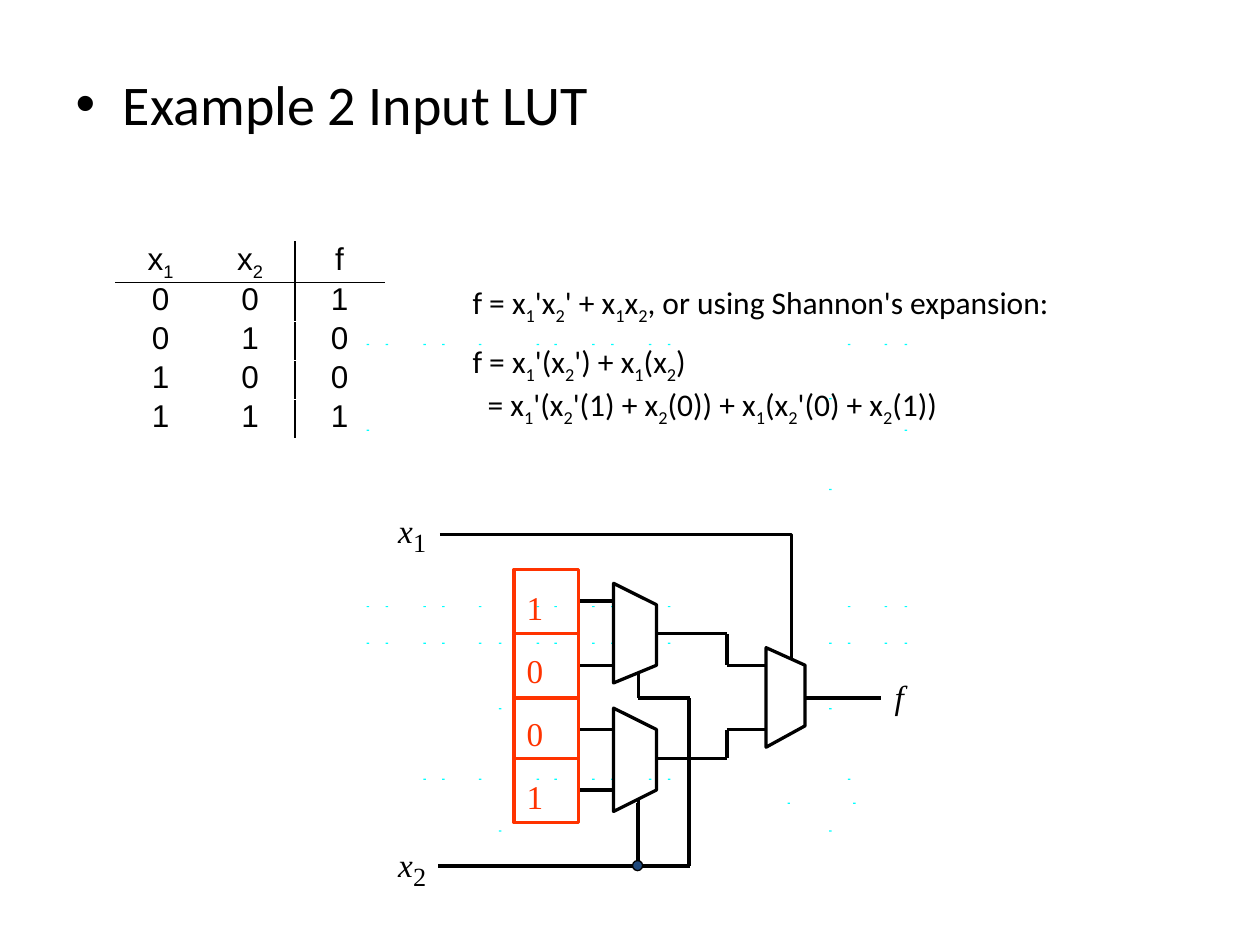
"""Build a slide that explains a two-input lookup table."""
from dataclasses import dataclass

from lxml import etree
from pptx import Presentation
from pptx.dml.color import RGBColor
from pptx.enum.shapes import MSO_CONNECTOR, MSO_SHAPE
from pptx.enum.text import PP_ALIGN
from pptx.oxml.ns import qn
from pptx.util import Inches, Pt

RECT, OVAL, STRAIGHT = MSO_SHAPE.RECTANGLE, MSO_SHAPE.OVAL, MSO_CONNECTOR.STRAIGHT
CENTER = PP_ALIGN.CENTER
COLORS = {"ink": "000000", "cell": "FF3300", "speck": "00FFFF", "node": "1F497D", "paper": "FFFFFF"}
SERIF = "Times New Roman"
THIN, THICK = 1.88, 2.25

COLUMNS = [2.91, 3.06, 3.36, 3.51, 3.8, 4.26, 4.4, 4.7, 4.85, 5.15, 5.3, 6.73, 7.02, 7.18]
SPECKS = {
    2.73: COLUMNS,
    3.16: [6.58],
    3.41: [2.91, 7.18],
    3.88: [6.58],
    4.81: COLUMNS,
    5.1: COLUMNS + [3.96, 6.58],
    5.62: [3.96, 6.58],
    6.18: COLUMNS[2:12],
    6.37: [6.25, 6.77],
    6.59: [3.96, 6.58],
}
TRUTH = [["x_1", "x_2", "f"], "001", "010", "100", "111"]


@dataclass
class Equation:
    text: str
    before: float = 9
    indent: float = 0


@dataclass
class Wire:
    x1: float
    y1: float
    x2: float
    y2: float
    width: float = THIN


@dataclass
class Mux:
    left: float
    right: float
    ys: tuple
    fill: str = ""


@dataclass
class Label:
    text: str
    x: float
    y: float
    w: float
    h: float = 0.32
    size: float = 19
    color: str = "ink"
    italic: bool = False


@dataclass
class Memory:
    bit: str
    y: float
    h: float
    text_y: float


EQUATIONS = [
    Equation("f = x_1'x_2' + x_1x_2, or using Shannon's expansion:"),
    Equation("f = x_1'(x_2') + x_1(x_2)"),
    Equation("= x_1'(x_2'(1) + x_2(0)) + x_1(x_2'(0) + x_2(1))", 0, 0.12),
]
MEMORY = [
    Memory("1", 4.52, 0.51, 4.66),
    Memory("0", 5.03, 0.51, 5.16),
    Memory("0", 5.54, 0.48, 5.66),
    Memory("1", 6.02, 0.51, 6.16),
]
MUXES = [
    Mux(4.87, 5.21, (4.63, 4.8, 5.28, 5.42), "paper"),
    Mux(4.87, 5.21, (5.62, 5.79, 6.27, 6.44)),
    Mux(6.08, 6.39, (5.14, 5.28, 5.76, 5.93)),
]
WIRES = [Wire(4.59, y, 4.87, y) for y in (4.77, 5.28, 5.79, 6.27)] + [
    Wire(5.21, 5.03, 5.77, 5.03),
    Wire(5.77, 5.03, 5.77, 5.28),
    Wire(5.77, 5.28, 6.08, 5.28),
    Wire(5.21, 6.02, 5.77, 6.02),
    Wire(5.77, 6.02, 5.77, 5.79),
    Wire(5.77, 5.79, 6.08, 5.79),
    Wire(6.39, 5.54, 6.99, 5.54),
    Wire(5.07, 5.34, 5.07, 5.54),
    Wire(5.07, 6.33, 5.07, 6.52),
    Wire(3.48, 6.87, 5.48, 6.87, THICK),
    Wire(5.06, 6.37, 5.06, 6.87, THICK),
    Wire(5.47, 6.87, 5.47, 5.54, THICK),
    Wire(5.48, 5.54, 5.06, 5.54, THICK),
]
LABELS = [Label("f", 7.1, 5.37, 0.15, italic=True)]
for digit, top in (("1", 4.05), ("2", 6.7)):
    LABELS += [
        Label("x", 3.16, top, 0.2, italic=True),
        Label(digit, 3.28, top + 0.13, 0.17, 0.25, 15),
    ]


def rgb(name: str) -> RGBColor:
    return RGBColor.from_string(COLORS[name])


def style_font(font, name: str, size: float, color: str = "ink") -> None:
    font.name, font.size = name, Pt(size)
    font.color.rgb = rgb(color)


def style_shape(sp, fill: str = "", line: str = "", width: float = THIN) -> None:
    sp.shadow.inherit = False
    if fill:
        sp.fill.solid()
        sp.fill.fore_color.rgb = rgb(fill)
    else:
        sp.fill.background()
    if line:
        sp.line.color.rgb = rgb(line)
        sp.line.width = Pt(width)
    else:
        sp.line.fill.background()


def add_box(shapes, kind, x: float, y: float, w: float, h: float, **style) -> None:
    sp = shapes.add_shape(kind, Inches(x), Inches(y), Inches(w), Inches(h))
    style_shape(sp, **style)


def add_outline(shapes, points: list, close: bool, fill: str = "") -> None:
    pts = [(Inches(x), Inches(y)) for x, y in points]
    builder = shapes.build_freeform(*pts[0])
    builder.add_line_segments(pts[1:], close=close)
    style_shape(builder.convert_to_shape(), fill, "ink")


def add_wire(shapes, wire: Wire) -> None:
    ends = (Inches(v) for v in (wire.x1, wire.y1, wire.x2, wire.y2))
    c = shapes.add_connector(STRAIGHT, *ends)
    c.line.color.rgb = rgb("ink")
    c.line.width = Pt(wire.width)
    etree.SubElement(c._element.spPr, qn("a:effectLst"))


def add_text_frame(shapes, x: float, y: float, w: float, h: float, wrap: bool):
    tf = shapes.add_textbox(Inches(x), Inches(y), Inches(w), Inches(h)).text_frame
    tf.margin_left = tf.margin_right = tf.margin_top = tf.margin_bottom = 0
    tf.word_wrap = wrap
    return tf


def add_label(shapes, label: Label) -> None:
    tf = add_text_frame(shapes, label.x, label.y, label.w, label.h, False)
    tf.text = label.text
    font = tf.paragraphs[0].runs[0].font
    style_font(font, SERIF, label.size, label.color)
    font.italic = label.italic


def add_formula(p, text: str, font_name: str) -> None:
    """Write text in which an underscore lowers the next character."""
    first, *rest = text.split("_")
    pieces = [(first, False)]
    for part in rest:
        pieces += [(part[0], True), (part[1:], False)]
    for piece, lowered in pieces:
        if piece:
            r = p.add_run()
            r.text = piece
            style_font(r.font, font_name, 18)
            if lowered:
                r._r.get_or_add_rPr().set("baseline", "-25000")


def add_borders(cell, sides: list) -> None:
    tc_pr = cell._tc.get_or_add_tcPr()
    for i, side in enumerate(sides):
        ln = etree.Element(qn(f"a:ln{side}"), w=str(Pt(1)))
        fill = etree.SubElement(ln, qn("a:solidFill"))
        etree.SubElement(fill, qn("a:srgbClr"), val=COLORS["ink"])
        tc_pr.insert(i, ln)


def add_truth_table(shapes) -> None:
    frame = shapes.add_table(5, 3, Inches(0.92), Inches(1.92), Inches(2.13), Inches(1.55))
    table = frame.table
    table.first_row = table.horz_banding = False
    for i, row in enumerate(TRUTH):
        for j, text in enumerate(row):
            cell = table.cell(i, j)
            cell.margin_left = cell.margin_right = cell.margin_top = cell.margin_bottom = 0
            cell.fill.background()
            p = cell.text_frame.paragraphs[0]
            p.alignment = CENTER
            add_formula(p, text, "Arial")
            edges = {"L": j == 2, "R": j == 1, "T": i == 1, "B": i == 0}
            add_borders(cell, [side for side, shown in edges.items() if shown])


def add_equations(shapes) -> None:
    tf = add_text_frame(shapes, 3.75, 2.25, 5.92, 1.17, True)
    for i, equation in enumerate(EQUATIONS):
        p = tf.add_paragraph() if i else tf.paragraphs[0]
        p.space_before = Pt(equation.before)
        p._p.get_or_add_pPr().set("marL", str(Inches(equation.indent)))
        add_formula(p, equation.text, "Calibri")


def add_circuit(shapes) -> None:
    for wire in WIRES:
        add_wire(shapes, wire)
    for mux in MUXES:
        top, upper, lower, bottom = mux.ys
        points = [(mux.right, upper), (mux.right, lower), (mux.left, bottom), (mux.left, top)]
        add_outline(shapes, points, True, mux.fill)
    add_outline(shapes, [(3.49, 4.24), (6.28, 4.24), (6.28, 5.23)], False)
    for m in MEMORY:
        add_box(shapes, RECT, 4.08, m.y, 0.51, m.h, line="cell")
        add_label(shapes, Label(m.bit, 4.18, m.text_y, 0.22, color="cell"))
    for label in LABELS:
        add_label(shapes, label)
    add_box(shapes, OVAL, 5.02, 6.83, 0.08, 0.08, fill="node", line="ink", width=0.75)


def main() -> None:
    prs = Presentation()
    prs.slide_width, prs.slide_height = Inches(10), Inches(7.5)
    s = prs.slides.add_slide(prs.slide_layouts[1])
    title, body = s.placeholders
    title._element.getparent().remove(title._element)
    body.left, body.top, body.width, body.height = (Inches(v) for v in (0.5, 0.5, 9, 4.95))
    body.text_frame.text = "Example 2 Input LUT"
    style_font(body.text_frame.paragraphs[0].runs[0].font, "Calibri", 32)
    for y, xs in SPECKS.items():
        for x in xs:
            add_box(s.shapes, RECT, x, y, 0.02, 0.01, fill="speck")
    add_truth_table(s.shapes)
    add_equations(s.shapes)
    add_circuit(s.shapes.add_group_shape().shapes)
    prs.save("out.pptx")


if __name__ == "__main__":
    main()
